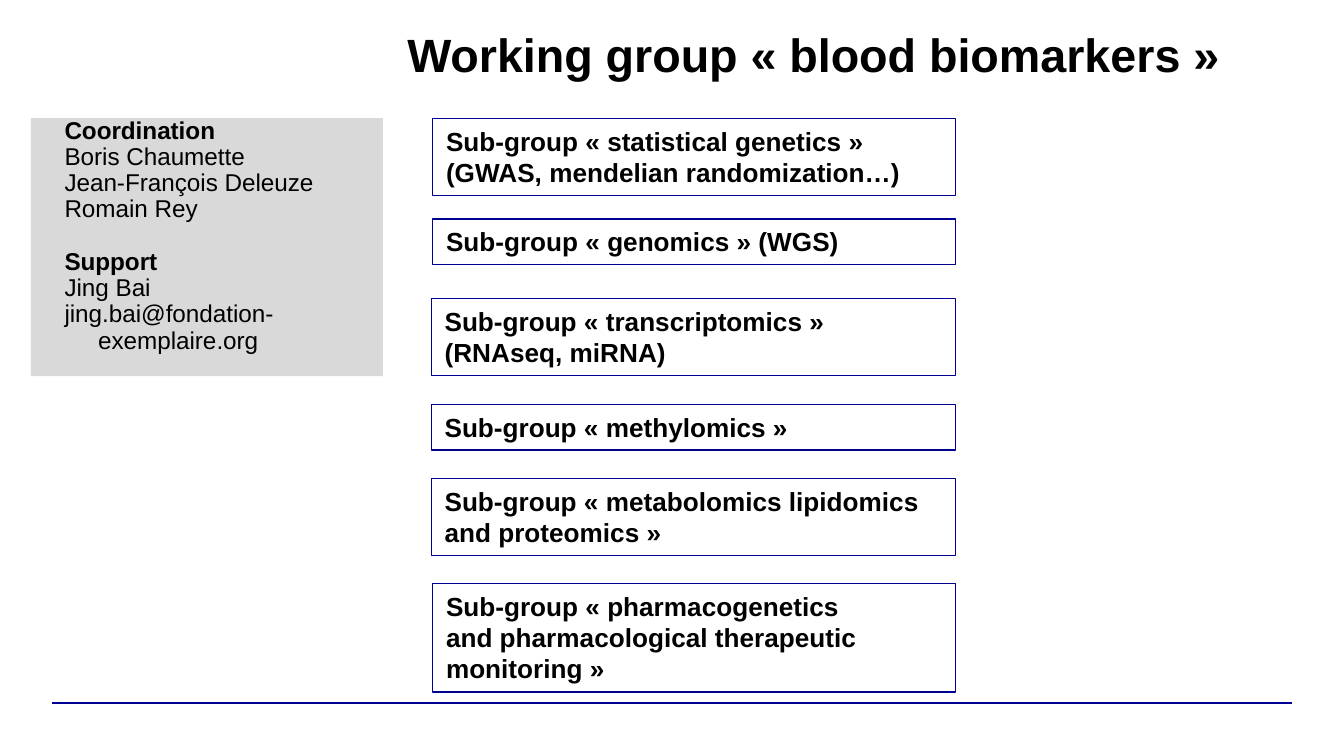
from lxml.etree import SubElement
from pptx import Presentation
from pptx.dml.color import RGBColor
from pptx.enum.shapes import MSO_CONNECTOR, MSO_SHAPE
from pptx.enum.text import MSO_ANCHOR, MSO_AUTO_SIZE, PP_ALIGN
from pptx.oxml.ns import qn
from pptx.util import Inches, Pt

WIDE = Inches(10)
HIGH = WIDE * 9 // 16
RIGHT = 71.1
COLORS = {"ink": "000000", "edge": "000091", "panel": "D9D9D9"}
TITLE = "Working group « blood biomarkers » "
PEOPLE = [
    ("Coordination", ["Boris Chaumette", "Jean-François Deleuze", "Romain Rey"]),
    ("Support", ["Jing Bai", "jing.bai@fondation-exemplaire.org"]),
]
GROUPS = [
    (32.2, 15.64, 2, ["Sub-group « statistical genetics »",
                      "(GWAS, mendelian randomization…)"]),
    (32.2, 28.98, 1, ["Sub-group « genomics » (WGS)"]),
    (32.1, 39.47, 2, ["Sub-group « transcriptomics »", "(RNAseq, miRNA)"]),
    (32.1, 53.51, 1, ["Sub-group « methylomics »"]),
    (32.1, 63.29, 2, ["Sub-group « metabolomics lipidomics and proteomics »"]),
    (32.2, 77.16, 3, ["Sub-group « pharmacogenetics ",
                      "and pharmacological therapeutic monitoring »"]),
]


def color(name):
    return RGBColor.from_string(COLORS[name])


def across(share):
    return round(WIDE * share / 100)


def down(share):
    return round(HIGH * share / 100)


def assign(item, values):
    for name, value in values.items():
        setattr(item, name, value)


def area(left, top, width, height):
    return across(left), down(top), across(width), down(height)


def write(para, text, size, bold, **layout):
    para.text = text
    assign(para, layout)
    assign(para.font, {"name": "Arial", "size": Pt(size), "bold": bold})
    para.font.color.rgb = color("ink")


def add_para(frame, first):
    return frame.paragraphs[0] if first else frame.add_paragraph()


def trim(frame):
    assign(frame, {"margin_left": 0, "margin_right": 0,
                   "margin_top": 0, "margin_bottom": 0})


def add_box(slide, place):
    box = slide.shapes.add_shape(MSO_SHAPE.RECTANGLE, *place)
    box.shadow.inherit = False
    assign(box.text_frame, {"word_wrap": True, "vertical_anchor": MSO_ANCHOR.TOP})
    return box


def add_title(slide):
    title = slide.shapes.title
    left, top, width, height = area(16.7, 4.27, 88.6, 19.38)
    assign(title, {"left": left, "top": top, "width": width, "height": height})
    frame = title.text_frame
    trim(frame)
    assign(frame, {"word_wrap": True, "vertical_anchor": MSO_ANCHOR.TOP,
                   "auto_size": MSO_AUTO_SIZE.NONE})
    write(frame.paragraphs[0], TITLE, 25, True,
          alignment=PP_ALIGN.CENTER, line_spacing=0.9)


def add_panel(slide):
    panel = add_box(slide, area(2.3, 15.64, 26.2, 34.13))
    panel.fill.solid()
    panel.fill.fore_color.rgb = color("panel")
    panel.line.fill.background()
    frame = panel.text_frame
    trim(frame)
    for part, (head, names) in enumerate(PEOPLE):
        for row, text in enumerate([head, *names]):
            para = add_para(frame, part == row == 0)
            props = para._p.get_or_add_pPr()
            props.set("marL", str(Inches(0.5)))
            props.set("indent", str(Inches(-0.25)))
            gap = Pt(14) if part and not row else Pt(0)
            write(para, text, 13, row == 0, alignment=PP_ALIGN.LEFT,
                  line_spacing=0.9, space_before=gap)


def add_group(slide, left, top, rows, lines):
    box = add_box(slide, area(left, top, RIGHT - left, 1.87 + 4.17 * rows))
    box.fill.background()
    box.line.color.rgb = color("edge")
    box.line.width = Pt(0.75)
    box.text_frame.auto_size = MSO_AUTO_SIZE.SHAPE_TO_FIT_TEXT
    for index, text in enumerate(lines):
        para = add_para(box.text_frame, index == 0)
        write(para, text, 14, True, alignment=PP_ALIGN.LEFT)


def add_rule(slide):
    level = down(92.98)
    rule = slide.shapes.add_connector(
        MSO_CONNECTOR.STRAIGHT, across(3.9), level, across(96.1), level)
    rule.line.color.rgb = color("edge")
    rule.line.width = Pt(0.75)
    SubElement(rule._element.spPr, qn("a:effectLst"))


def main():
    deck = Presentation()
    assign(deck, {"slide_width": WIDE, "slide_height": HIGH})
    slide = deck.slides.add_slide(deck.slide_layouts[5])
    add_rule(slide)
    add_title(slide)
    add_panel(slide)
    for group in GROUPS:
        add_group(slide, *group)
    deck.save("out.pptx")


if __name__ == "__main__":
    main()
